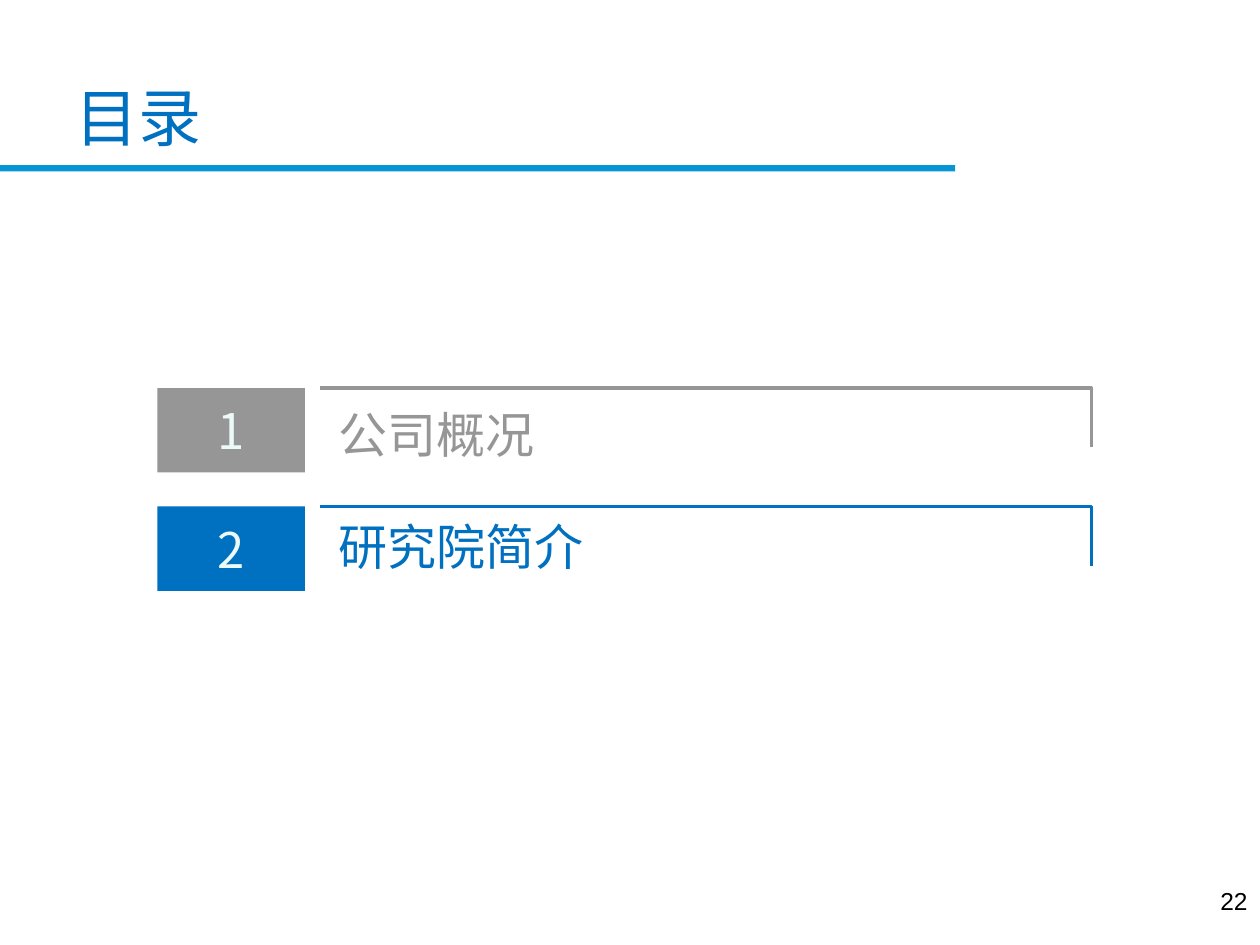
from lxml import etree
from pptx import Presentation
from pptx.dml.color import RGBColor
from pptx.enum.shapes import MSO_SHAPE
from pptx.enum.text import MSO_ANCHOR, PP_ALIGN
from pptx.oxml.ns import qn
from pptx.util import Inches, Pt

RECTANGLE = MSO_SHAPE.RECTANGLE
TOP, MIDDLE = MSO_ANCHOR.TOP, MSO_ANCHOR.MIDDLE
LEFT, CENTER, RIGHT = PP_ALIGN.LEFT, PP_ALIGN.CENTER, PP_ALIGN.RIGHT
LATIN, CHINESE = "Arial", "Noto Sans CJK SC"
BLUE, GRAY, SKY, MINT, BLACK = "0070C0", "969696", "0595D4", "ECFAF7", "000000"
TITLE_ONLY = 5
NUMBER_LEFT, NUMBER_WIDTH, ROW_HEIGHT = 1.25, 1.17, 0.67
BRACKET_LEFT, BRACKET_RIGHT, BRACKET_DROP = 2.54, 8.66, 0.47
LABEL_LEFT = 2.59
FIRST_ROW, ROW_PITCH = 3.08, 0.94
ENTRIES = [("公司概况", GRAY, 3.16), ("研究院简介", BLUE, 4.05)]


def color(hex_value):
    """Turn a hex string into a colour."""
    return RGBColor.from_string(hex_value)


def write(shape, text, size, hex_value, font=LATIN, align=LEFT, anchor=TOP, inset=None):
    """Put one formatted line of text into a shape."""
    frame = shape.text_frame
    frame.word_wrap = True
    frame.vertical_anchor = anchor
    if inset is not None:
        frame.margin_left = frame.margin_right = Inches(inset)
        frame.margin_top = frame.margin_bottom = Inches(inset)
    paragraph = frame.paragraphs[0]
    paragraph.alignment = align
    run = paragraph.add_run()
    run.text = text
    run.font.size = Pt(size)
    run.font.name = font
    run.font.color.rgb = color(hex_value)
    east_asian = etree.SubElement(run.font._element, qn("a:ea"))
    east_asian.set("typeface", CHINESE)


def add_box(slide, left, top, width, height, fill):
    """Add a plain filled rectangle."""
    shape = slide.shapes.add_shape(
        RECTANGLE, Inches(left), Inches(top), Inches(width), Inches(height))
    shape.shadow.inherit = False
    shape.fill.solid()
    shape.fill.fore_color.rgb = color(fill)
    shape.line.fill.background()
    return shape


def add_text(slide, left, top, width, height, text, size, hex_value, **text_format):
    """Add a text box with one line of text."""
    box = slide.shapes.add_textbox(
        Inches(left), Inches(top), Inches(width), Inches(height))
    write(box, text, size, hex_value, **text_format)


def add_bracket(slide, top, hex_value):
    """Add the open corner line around a contents entry."""
    builder = slide.shapes.build_freeform(
        Inches(BRACKET_LEFT), Inches(top))
    builder.add_line_segments(
        [(Inches(BRACKET_RIGHT), Inches(top)),
         (Inches(BRACKET_RIGHT), Inches(top + BRACKET_DROP))], close=False)
    bracket = builder.convert_to_shape()
    bracket.shadow.inherit = False
    bracket.fill.background()
    bracket.line.color.rgb = color(hex_value)
    bracket.line.width = Pt(1.75)


def add_entry(slide, index, label, hex_value, label_top):
    """Add one numbered row of the contents."""
    top = FIRST_ROW + index * ROW_PITCH
    number = add_box(slide, NUMBER_LEFT, top, NUMBER_WIDTH, ROW_HEIGHT, hex_value)
    write(number, str(index + 1), 28, MINT, font=CHINESE,
          align=CENTER, anchor=MIDDLE, inset=0)
    add_bracket(slide, top, hex_value)
    add_text(slide, LABEL_LEFT, label_top, BRACKET_RIGHT - LABEL_LEFT, 0.57,
             label, 28, hex_value)


def add_title(slide, text):
    """Place and fill the title over its rule."""
    add_box(slide, 0, 1.31, 7.58, 0.05, SKY)
    title = slide.shapes.title
    title.left, title.top = Inches(0.5), Inches(0.3)
    title.width, title.height = Inches(9), Inches(1.25)
    write(title, text, 36, BLUE, anchor=MIDDLE)


def main():
    """Build the contents slide."""
    presentation = Presentation()
    presentation.slide_width, presentation.slide_height = Inches(10), Inches(7.5)
    slide = presentation.slides.add_slide(presentation.slide_layouts[TITLE_ONLY])
    add_title(slide, "目录")
    for index, (label, hex_value, label_top) in enumerate(ENTRIES):
        add_entry(slide, index, label, hex_value, label_top)
    add_text(slide, 7.67, 6.98, 2.33, 0.52, "22", 14, BLACK, align=RIGHT)
    presentation.save("out.pptx")


if __name__ == "__main__":
    main()
